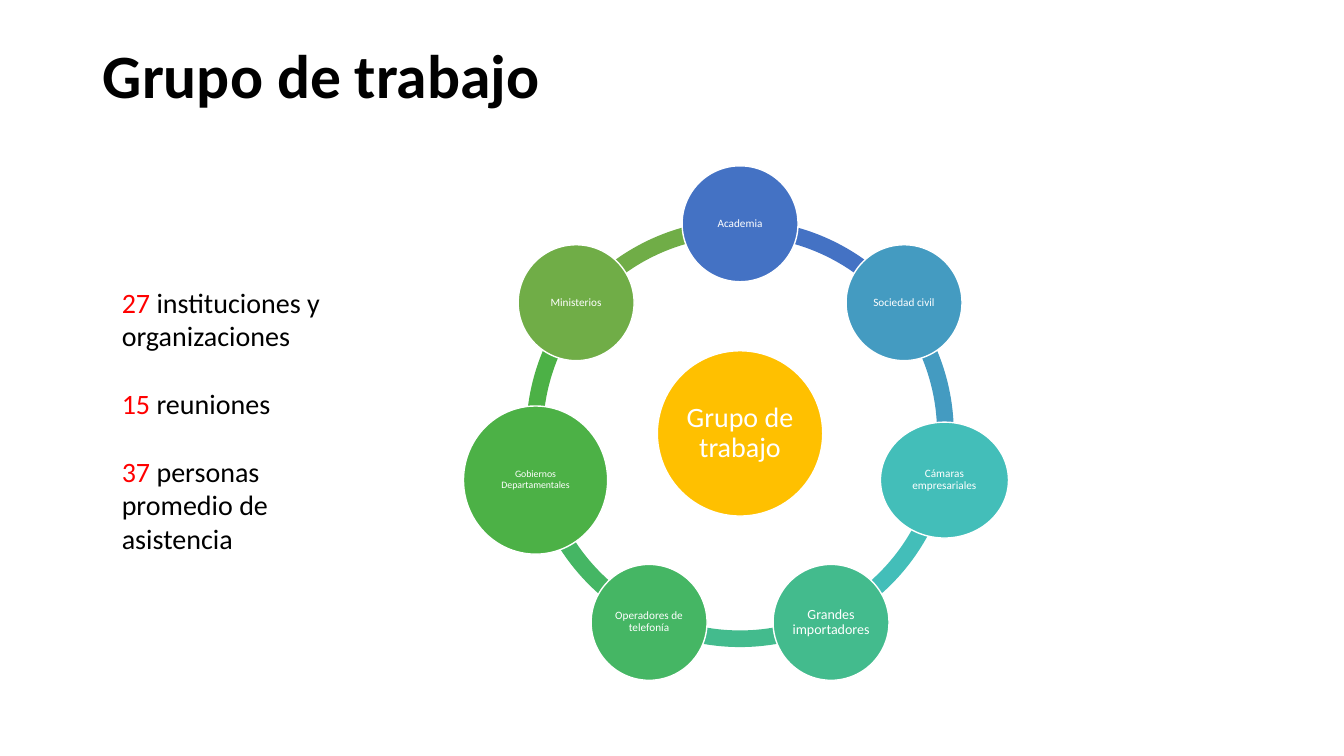
from math import cos, radians, sin

from pptx import Presentation
from pptx.dml.color import RGBColor
from pptx.enum.shapes import MSO_SHAPE
from pptx.enum.text import MSO_ANCHOR, MSO_AUTO_SIZE, PP_ALIGN
from pptx.util import Emu, Pt

PX = 9144  # 100 px to the inch
FONT = "Calibri"
COLORS = {
    "black": "000000", "white": "FFFFFF", "red": "FF0000", "gold": "FFC000",
    "blue": "4472C4", "sky": "449BC1", "teal": "43BEB9", "mint": "43BB8D",
    "emerald": "45B664", "green": "4CB146", "olive": "70AD47",
}
# Label, colour, text size, width, height; clockwise from the top
MEMBERS = [
    ("Academia", "blue", 8, 115, 115),
    ("Sociedad civil", "sky", 8, 115, 115),
    ("Cámaras empresariales", "teal", 8, 127, 115),
    ("Grandes importadores", "mint", 10, 115, 115),
    ("Operadores de telefonía", "emerald", 8, 115, 115),
    ("Gobiernos Departamentales", "green", 7, 143, 147),
    ("Ministerios", "olive", 8, 115, 115),
]
FIGURES = [
    ("27", " instituciones y organizaciones"),
    ("15", " reuniones"),
    ("37", " personas promedio de asistencia"),
]


def px(*lengths):
    return [Emu(round(length * PX)) for length in lengths]


def rgb(color):
    return RGBColor.from_string(COLORS[color])


def style(run, size, color, bold=False):
    run.font.name = FONT
    run.font.size = Pt(size)
    run.font.bold = bold
    run.font.color.rgb = rgb(color)


def add_title(slide, box):
    title = slide.shapes.title
    title.left, title.top, title.width, title.height = px(*box)
    title.text_frame.text = "Grupo de trabajo"
    title.text_frame.vertical_anchor = MSO_ANCHOR.TOP
    heading = title.text_frame.paragraphs[0]
    heading.alignment = PP_ALIGN.LEFT
    heading.line_spacing = 0.9
    style(heading.runs[0], 44, "black", bold=True)


def add_figures(slide, box):
    frame = slide.shapes.add_textbox(*px(*box)).text_frame
    frame.word_wrap = True
    frame.auto_size = MSO_AUTO_SIZE.SHAPE_TO_FIT_TEXT
    for index, (number, description) in enumerate(FIGURES):
        line = frame.add_paragraph() if index else frame.paragraphs[0]
        line.space_before = Pt(24.4 if index else 0)
        for text, color in ((number, "red"), (description, "black")):
            run = line.add_run()
            run.text = text
            style(run, 20, color)


def add_filled(shapes, kind, box, color):
    shape = shapes.add_shape(kind, *px(*box))
    shape.shadow.inherit = False
    shape.fill.solid()
    shape.fill.fore_color.rgb = rgb(color)
    shape.line.fill.background()
    return shape


def add_circle(shapes, center, size, label, color, text_size, margin):
    (x, y), (width, height) = center, size
    circle = add_filled(shapes, MSO_SHAPE.OVAL,
                        (x - width / 2, y - height / 2, width, height), color)
    circle.line.color.rgb = rgb("white")
    circle.line.width = Pt(1)
    frame = circle.text_frame
    frame.text = label
    frame.word_wrap = True
    frame.vertical_anchor = MSO_ANCHOR.MIDDLE
    frame.margin_left, frame.margin_top, frame.margin_right, frame.margin_bottom = px(*[margin] * 4)
    paragraph = frame.paragraphs[0]
    paragraph.alignment = PP_ALIGN.CENTER
    paragraph.line_spacing = 0.9
    style(paragraph.runs[0], text_size, "white")


def add_wheel(slide, box):
    left, top, side, _ = box
    middle_x, middle_y = left + side / 2, top + side / 2
    radius = 208
    step = 360 / len(MEMBERS)
    shapes = slide.shapes.add_group_shape().shapes

    # Ring segments, each running clockwise from its member
    for index, (_, color, *_) in reversed(list(enumerate(MEMBERS))):
        start = 270 + index * step
        arc = add_filled(shapes, MSO_SHAPE.BLOCK_ARC, box, color)
        arc.adjustments[0] = start % 360 * 0.6  # 60000ths of a degree / 100000
        arc.adjustments[1] = (start + step) % 360 * 0.6
        arc.adjustments[2] = 0.039

    # Hub and members
    add_circle(shapes, (middle_x, middle_y), (164, 164), "Grupo de trabajo", "gold", 20, 3)
    for index, (label, color, text_size, width, height) in enumerate(MEMBERS):
        angle = radians(index * step - 90)
        center = middle_x + radius * cos(angle), middle_y + radius * sin(angle)
        add_circle(shapes, center, (width, height), label, color, text_size, 1)


def main():
    presentation = Presentation()
    presentation.slide_width, presentation.slide_height = px(1333, 750)
    slide = presentation.slides.add_slide(presentation.slide_layouts[5])
    add_title(slide, (92, 40, 1150, 145))
    add_wheel(slide, (522, 218, 424, 424))
    add_figures(slide, (111, 278, 263, 279))
    presentation.save("out.pptx")


if __name__ == "__main__":
    main()
